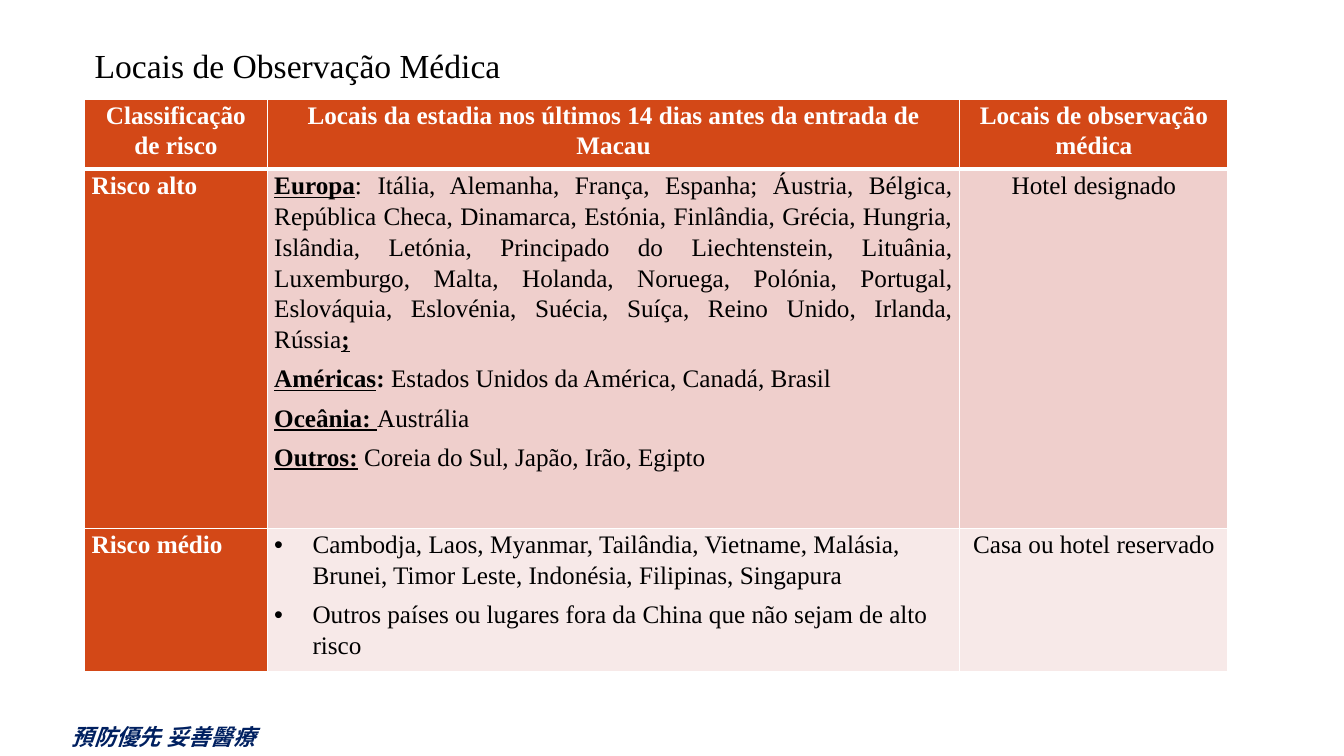
from lxml.etree import SubElement
from pptx import Presentation
from pptx.dml.color import RGBColor
from pptx.enum.text import MSO_ANCHOR as Anchor, PP_ALIGN as Align
from pptx.oxml.ns import qn
from pptx.util import Emu, Inches, Pt

SERIF, HAN = "Times New Roman", "Noto Sans CJK SC"
WHITE, BLACK, NAVY, ORANGE = "FFFFFF", "000000", "002060", "D34817"
ROW_FILLS = [ORANGE, "EFCFCC", "F7E9E8"]
WIDTH, HEIGHT = 13.33, 7.5
LEFT, TOP = 0.84, 0.99
COLUMNS, ROWS = [1.81, 6.87, 2.66], [0.69, 3.56, 1.42]

PLAIN, BOLD, KEY = (False, False), (True, False), (True, True)
TITLE = [("Locais de Observação Médica", PLAIN)]
MOTTO = [("預防優先 妥善醫療", BOLD)]
HEADER = ["Classificação de risco",
          "Locais da estadia nos últimos 14 dias antes da entrada de Macau",
          "Locais de observação médica"]
HIGH_RISK = [
    [("Europa", KEY),
     (": Itália, Alemanha, França, Espanha; Áustria, Bélgica, República Checa, "
      "Dinamarca, Estónia, Finlândia, Grécia, Hungria, Islândia, Letónia, "
      "Principado do Liechtenstein, Lituânia, Luxemburgo, Malta, Holanda, Noruega, "
      "Polónia, Portugal, Eslováquia, Eslovénia, Suécia, Suíça, Reino Unido, "
      "Irlanda, Rússia", PLAIN),
     (";", KEY)],
    [("Américas", KEY), (": ", BOLD), ("Estados Unidos da América, Canadá, Brasil", PLAIN)],
    [("Oceânia: ", KEY), ("Austrália", PLAIN)],
    [("Outros:", KEY), (" Coreia do Sul, Japão, Irão, Egipto", PLAIN)],
]
MEDIUM_RISK = [
    [("Cambodja, Laos, Myanmar, Tailândia, Vietname, Malásia, Brunei, Timor Leste, "
      "Indonésia, Filipinas, Singapura", PLAIN)],
    [("Outros países ou lugares fora da China que não sejam de alto risco", PLAIN)],
]
GRID = [
    [[[(heading, BOLD)]] for heading in HEADER],
    [[[("Risco alto", BOLD)]], HIGH_RISK, [[("Hotel designado", PLAIN)]]],
    [[[("Risco médio", BOLD)]], MEDIUM_RISK, [[("Casa ou hotel reservado", PLAIN)]]],
]


def color(value):
    return RGBColor.from_string(value)


def write(para, spans, size, ink, face=SERIF):
    for text, (bold, underline) in spans:
        span = para.add_run()
        span.text = text
        font = span.font
        font.name, font.size, font.bold, font.underline = face, Pt(size), bold, underline
        font.color.rgb = color(ink)
        yield span


def add_label(page, place, spans, size, ink, face=SERIF):
    box = page.shapes.add_textbox(*map(Inches, place))
    frame = box.text_frame
    frame.word_wrap = True
    return frame, list(write(frame.paragraphs[0], spans, size, ink, face))


def add_bullet(para):
    props = para._p.get_or_add_pPr()
    props.set("marL", str(Inches(0.38)))
    props.set("indent", str(-Inches(0.38)))
    SubElement(props, qn("a:buFont"), typeface="Arial")
    SubElement(props, qn("a:buChar"), char="•")


def add_borders(cell, top, bottom):
    props = cell._tc.get_or_add_tcPr()
    for side, width in (("L", 1), ("R", 1), ("T", top), ("B", bottom)):
        line = SubElement(props, qn(f"a:ln{side}"), w=str(Pt(width)))
        SubElement(SubElement(line, qn("a:solidFill")), qn("a:srgbClr"), val=WHITE)


def fill_cell(cell, content, row, column):
    heading = row == 0 or column == 0
    cell.margin_left = cell.margin_right = Inches(0.07)
    cell.margin_top = cell.margin_bottom = Emu(0)
    add_borders(cell, 3 if row == 1 else 1, 3 if row == 0 else 1)
    cell.fill.solid()
    cell.fill.fore_color.rgb = color(ORANGE if heading else ROW_FILLS[row])
    frame = cell.text_frame
    for index, spans in enumerate(content):
        para = frame.add_paragraph() if index else frame.paragraphs[0]
        para.line_spacing = Pt(22) if row else 1.07
        if index:
            para.space_before = Pt(6)
        if row == 0 or column == 2:
            para.alignment = Align.CENTER
        elif content is HIGH_RISK:
            para.alignment = Align.JUSTIFY
        else:
            para.alignment = Align.LEFT
        if content is MEDIUM_RISK:
            add_bullet(para)
        list(write(para, spans, 18, WHITE if heading else BLACK))


def add_risk_table(page):
    frame = page.shapes.add_table(len(ROWS), len(COLUMNS), Inches(LEFT), Inches(TOP),
                                  Inches(sum(COLUMNS)), Inches(sum(ROWS)))
    table = frame.table
    for column, width in zip(table.columns, COLUMNS):
        column.width = Inches(width)
    for row, height in zip(table.rows, ROWS):
        row.height = Inches(height)
    for row, contents in enumerate(GRID):
        for column, content in enumerate(contents):
            fill_cell(table.cell(row, column), content, row, column)


def main():
    """Build the slide on medical observation places."""
    deck = Presentation()
    deck.slide_width, deck.slide_height = Inches(WIDTH), Inches(HEIGHT)
    page = deck.slides.add_slide(deck.slide_layouts[6])

    frame, spans = add_label(page, (0, 7.13, 3.25, 0.37), MOTTO, 16, NAVY, HAN)
    frame.paragraphs[0].alignment = Align.CENTER
    for span in spans:
        span.font.italic = True
        SubElement(span.font._element, qn("a:ea"), typeface=HAN)

    frame, spans = add_label(page, (LEFT, 0.36, 10.55, 0.63), TITLE, 24, BLACK)
    frame.vertical_anchor = Anchor.MIDDLE
    frame.margin_bottom = Inches(0.1)

    add_risk_table(page)
    deck.save("out.pptx")


if __name__ == "__main__":
    main()
